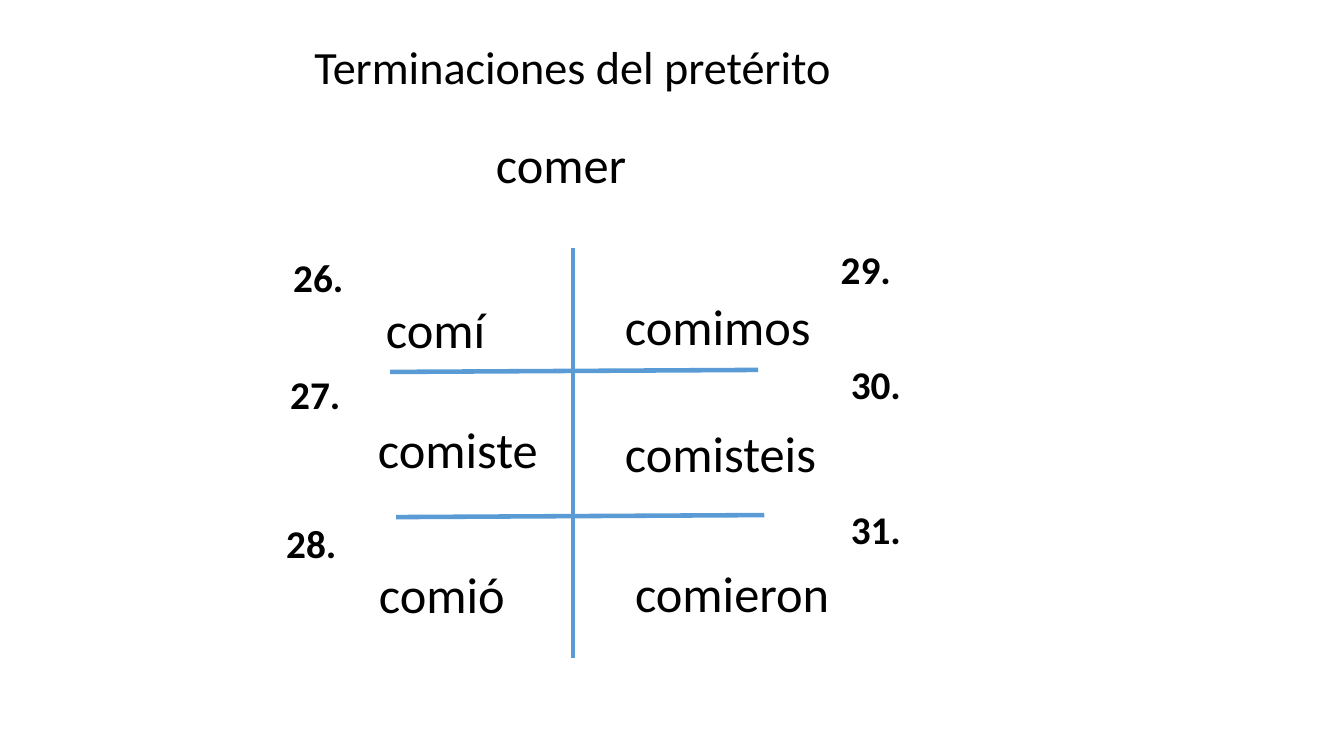
from lxml.etree import SubElement
from pptx import Presentation
from pptx.dml.color import RGBColor
from pptx.enum.shapes import MSO_CONNECTOR as Connector
from pptx.enum.text import MSO_AUTO_SIZE as AutoSize
from pptx.oxml.ns import qn
from pptx.util import Inches, Pt


def color(hex_string):
    return RGBColor.from_string(hex_string)


class ConjugationSlide:
    FONT = "Calibri"
    TEXT = "000000"
    RULE = "5B9BD5"

    def __init__(self, presentation):
        self.slide = presentation.slides.add_slide(presentation.slide_layouts[6])

    def line(self, start, end, width):
        ends = [Inches(value) for value in (*start, *end)]
        connector = self.slide.shapes.add_connector(Connector.STRAIGHT, *ends)
        connector.line.color.rgb = color(self.RULE)
        connector.line.width = Pt(width)
        SubElement(connector._element.spPr, qn("a:effectLst"))

    def text(self, words, left, top, width, height, size, bold=False, wrap=True):
        box = [Inches(value) for value in (left, top, width, height)]
        frame = self.slide.shapes.add_textbox(*box).text_frame
        frame.word_wrap = wrap
        frame.auto_size = AutoSize.SHAPE_TO_FIT_TEXT
        run = frame.paragraphs[0].add_run()
        run.text = words
        font_format = {"name": self.FONT, "size": Pt(size), "bold": bold}
        for attribute, value in font_format.items():
            setattr(run.font, attribute, value)
        run.font.color.rgb = color(self.TEXT)

    def verb(self, words, left, top, width):
        self.text(words, left, top, width, 0.71, size=36, wrap=False)

    def number(self, value, left, top):
        self.text(f"{value}.", left, top, 0.71, 0.57, size=28, bold=True)


def main():
    presentation = Presentation()
    presentation.slide_width = Inches(13.33)
    presentation.slide_height = Inches(7.5)
    page = ConjugationSlide(presentation)

    # Conjugation grid
    page.line((5.68, 2.46), (5.68, 6.53), 3)
    for left, top in ((3.87, 3.69), (3.93, 5.13)):
        page.line((left, top), (left + 3.65, top - 0.02), 3.25)

    # Title and infinitive
    page.text("Terminaciones del pretérito", 3.02, 0.33, 7.46, 0.66, size=33)
    page.verb("comer", 4.82, 1.27, 1.51)

    # Verb forms: singular, then plural
    verb_forms = (
        ("comí", 3.73, 2.91, 1.2),
        ("comiste", 3.65, 4.1, 1.8),
        ("comió", 3.66, 5.54, 1.46),
        ("comimos", 6.1, 2.88, 2.06),
        ("comisteis", 6.1, 4.14, 2.12),
        ("comieron", 6.2, 5.53, 2.15),
    )
    for verb_form in verb_forms:
        page.verb(*verb_form)

    # Question numbers, in the same order
    number_places = (
        (2.81, 2.46), (2.78, 3.62), (2.74, 5.1),
        (8.24, 2.38), (8.34, 3.53), (8.34, 4.96),
    )
    for value, place in enumerate(number_places, start=26):
        page.number(value, *place)

    presentation.save("out.pptx")


if __name__ == "__main__":
    main()
